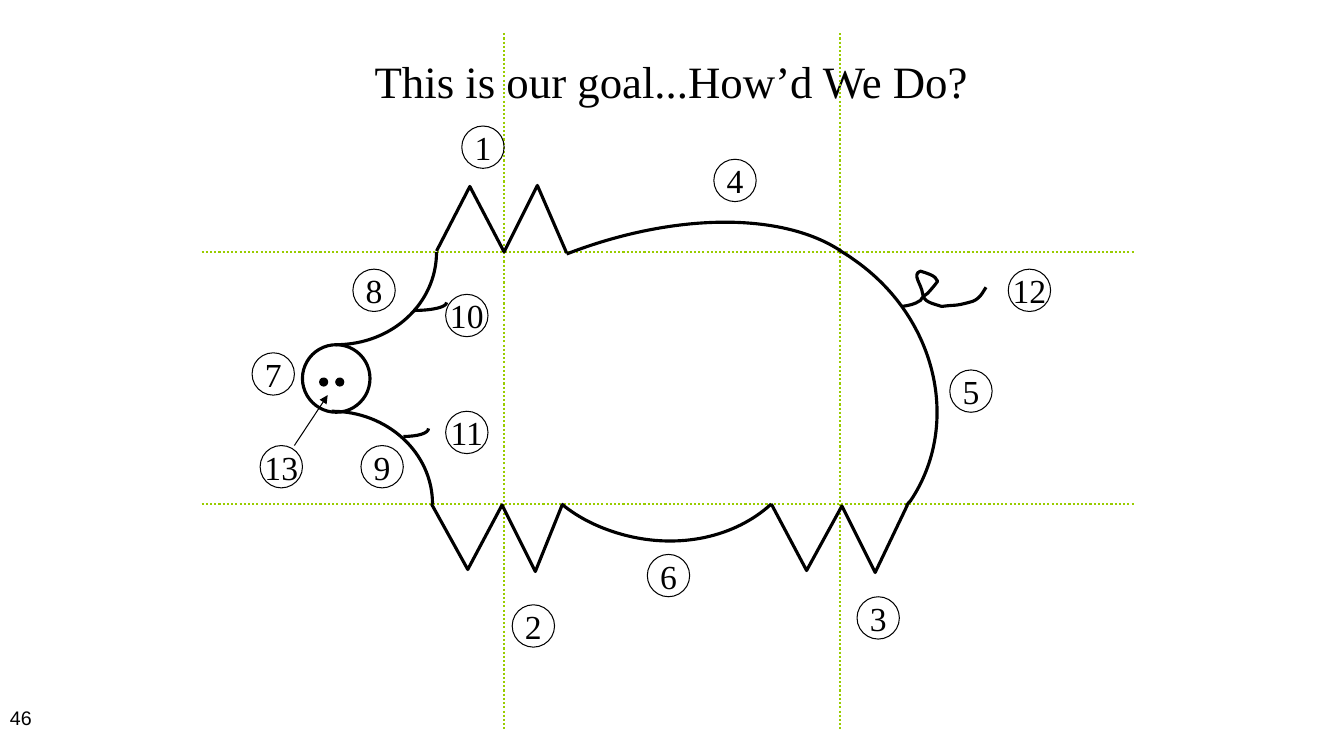
import math

from lxml import etree
from pptx import Presentation
from pptx.dml import color
from pptx.enum import dml, shapes, text
from pptx.oxml import ns
from pptx.util import Inches, Pt

BLACK, GREEN = "000000", "99CC00"
SERIF, SANS = "Times New Roman", "Arial"
BADGE_SIZE = 0.42
BADGES = [(4.58, 1.25), (5.08, 6), (8.5, 5.92), (7.08, 1.58), (9.42, 3.67),
          (6.42, 5.5), (2.5, 3.5), (3.5, 2.67), (3.58, 4.42), (4.42, 2.92),
          (4.42, 4.08), (10, 2.67)]
ZIGZAGS = [
    [(4.33, 2.49), (4.66, 1.85), (5, 2.5), (5.33, 1.84), (5.62, 2.51)],
    [(4.28, 5), (4.64, 5.65), (4.98, 5.01), (5.31, 5.67), (5.58, 5)],
    [(7.65, 5), (8, 5.66), (8.35, 5.02), (8.68, 5.68), (9, 5.01)],
]
BACK = [(5.62, 2.52), (6.68, 2.11), (7.75, 2.1), (8.34, 2.49)]
RUMP = [(8.32, 2.48), (8.37, 2.51), (8.42, 2.54), (8.46, 2.57),
        (9.29, 3.14), (9.54, 4.21), (9.03, 4.97),
        (9.01, 4.99), (9, 5), (8.99, 5.02)]
BELLY = [(7.65, 5), (7.29, 5.33), (6.74, 5.45), (6.2, 5.31),
         (5.97, 5.25), (5.75, 5.15), (5.57, 5)]
FOREHEAD = [(3.33, 3.42), (3.89, 3.42), (4.33, 3.01), (4.33, 2.5)]
CHIN = [(3.29, 4.08), (3.84, 4.08), (4.29, 4.49), (4.29, 5)]
EYE = [(4.1, 3.08), (4.28, 3.08), (4.43, 3.05), (4.43, 3)]
MOUTH = [(4, 4.33), (4.14, 4.33), (4.25, 4.3), (4.25, 4.25)]
TAIL = [(8.94, 3.04), (9.02, 3.03), (9.07, 3.02), (9.13, 2.98),
        (9.14, 2.96), (9.15, 2.95), (9.16, 2.94),
        (9.17, 2.93), (9.19, 2.92), (9.2, 2.91),
        (9.22, 2.89), (9.28, 2.82), (9.3, 2.79),
        (9.28, 2.73), (9.19, 2.71), (9.13, 2.69),
        (9.04, 2.72), (9.14, 2.82), (9.15, 2.91),
        (9.16, 3), (9.25, 3.01), (9.34, 3.04),
        (9.49, 3.02), (9.46, 3.04), (9.61, 3),
        (9.72, 2.98), (9.75, 2.89), (9.78, 2.85)]
CURVES = [
    (BACK, (5.66, 2, 2.69, 1.6), (6.09, 4.06), 336.9),
    (RUMP, (7.67, 2.89, 1.98, 1.73), (7.52, 3.95), 34.3),
    (BELLY, (6.04, 3.78, 1.25, 2.01), (6.52, 4.1), 104.5),
    (FOREHEAD, (3.33, 2.5, 1, 0.92), (3.33, 2.5), 0),
    (CHIN, (3.29, 4.08, 1, 0.92), (3.29, 5), 0),
    (EYE, (4.1, 3, 0.33, 0.08), (4.1, 3), 0),
    (MOUTH, (4, 4.25, 0.25, 0.08), (4, 4.25), 0),
    (TAIL, (8.94, 2.69, 0.84, 0.35), None, 0),
]


def set_color(target, value):
    """Apply a hex colour to a font, line or solid fill colour."""
    target.rgb = color.RGBColor.from_string(value)


def set_line(shape, value, width):
    """Set the colour and point width of an outline."""
    set_color(shape.line.color, value)
    shape.line.width = Pt(width)


def write(frame, content, size, font=SERIF, align=text.PP_ALIGN.CENTER):
    """Put one formatted paragraph in a text frame."""
    frame.text = content
    para = frame.paragraphs[0]
    para.alignment = align
    para.font.size = Pt(size)
    para.font.name = font
    set_color(para.font.color, BLACK)


def add_title(page, content):
    """Place and format the title."""
    title = page.shapes.title
    title.left, title.top = Inches(0.66), Inches(0.37)
    title.width, title.height = Inches(12), Inches(0.85)
    write(title.text_frame, content, 32)
    title.text_frame.vertical_anchor = text.MSO_ANCHOR.MIDDLE


def add_page_number(page, number):
    """Write the page number at the lower left."""
    box = page.shapes.add_textbox(Inches(0), Inches(6.95), Inches(3.11), Inches(0.4))
    box.text_frame.word_wrap = True
    write(box.text_frame, number, 14, SANS, text.PP_ALIGN.LEFT)


def add_line(parent, start, end, value, width):
    """Draw a straight line without a shadow."""
    line = parent.shapes.add_connector(
        shapes.MSO_CONNECTOR.STRAIGHT, *map(Inches, start + end))
    set_line(line, value, width)
    etree.SubElement(line._element.spPr, ns.qn("a:effectLst"))
    return line


def add_guide(page, start, end):
    """Draw a dotted grid line."""
    guide = add_line(page, start, end, GREEN, 1.5)
    guide.line.dash_style = dml.MSO_LINE.ROUND_DOT


def add_circle(parent, left, top, size, width, filled=False):
    """Draw a black circle, hollow or filled."""
    circle = parent.shapes.add_shape(
        shapes.MSO_SHAPE.OVAL, *map(Inches, (left, top, size, size)))
    circle.shadow.inherit = False
    set_line(circle, BLACK, width)
    if filled:
        circle.fill.solid()
        set_color(circle.fill.fore_color, BLACK)
    else:
        circle.fill.background()
    return circle


def add_badge(parent, number, left, top):
    """Draw a circled step number."""
    frame = add_circle(parent, left, top, BADGE_SIZE, 0.75).text_frame
    frame.word_wrap = False
    frame.vertical_anchor = text.MSO_ANCHOR.MIDDLE
    write(frame, str(number), 24)


def add_stroke(page, points):
    """Draw an open black outline through the points."""
    corners = [(Inches(x), Inches(y)) for x, y in points]
    builder = page.shapes.build_freeform(*corners[0])
    builder.add_line_segments(corners[1:], close=False)
    stroke = builder.convert_to_shape()
    stroke.shadow.inherit = False
    stroke.fill.background()
    set_line(stroke, BLACK, 2.25)
    return stroke


def unturn(point, frame, turn):
    """Give a point's place inside a frame before the frame is rotated."""
    left, top, width, height = frame
    angle = math.radians(-turn)
    x, y = point[0] - left - width / 2, point[1] - top - height / 2
    return (width / 2 + x * math.cos(angle) - y * math.sin(angle),
            height / 2 + x * math.sin(angle) + y * math.cos(angle))


def add_command(outline, name, points=()):
    """Append a drawing command with its points to an outline."""
    command = etree.SubElement(outline, ns.qn(f"a:{name}"))
    for x, y in points:
        etree.SubElement(command, ns.qn("a:pt"), x=str(Inches(x)), y=str(Inches(y)))


def add_outline(outlines, size, controls, **options):
    """Append a chain of cubic Bezier curves that share end points."""
    outline = etree.SubElement(outlines, ns.qn("a:path"), **size, **options)
    add_command(outline, "moveTo", controls[:1])
    for first in range(1, len(controls), 3):
        add_command(outline, "cubicBezTo", controls[first:first + 3])
    return outline


def add_curve(page, controls, frame, hub, turn):
    """Draw a curve, with an unstroked wedge to its hub if it has one."""
    left, top, width, height = frame
    stroke = add_stroke(page, [(left, top), (left + width, top + height)])
    stroke.rotation = turn
    outlines = next(stroke._element.iter(ns.qn("a:pathLst")))
    for outline in list(outlines):
        outlines.remove(outline)
    size = {"w": str(stroke.width), "h": str(stroke.height)}
    local = [unturn(point, frame, turn) for point in controls]
    add_outline(outlines, size, local, fill="none")
    if hub:
        wedge = add_outline(outlines, size, local, stroke="0")
        add_command(wedge, "lnTo", [unturn(hub, frame, turn)])
        add_command(wedge, "close")


def add_nostril_callout(page):
    """Group the last step number with its arrow to the nostrils."""
    group = page.shapes.add_group_shape()
    add_badge(group, len(BADGES) + 1, 2.58, 4.42)
    arrow = add_line(group, (2.92, 4.42), (3.25, 3.92), BLACK, 0.75)
    etree.SubElement(arrow.line._get_or_add_ln(), ns.qn("a:tailEnd"), type="triangle")


def main():
    """Build the pig drawing slide."""
    deck = Presentation()
    deck.slide_width, deck.slide_height = Inches(13.33), Inches(7.5)
    page = deck.slides.add_slide(deck.slide_layouts[5])
    add_title(page, "This is our goal...How’d We Do?")
    add_page_number(page, "46")
    for x in (5, 8.33):
        add_guide(page, (x, 0.33), (x, 7.25))
    for y in (2.5, 5):
        add_guide(page, (2, y), (11.25, y))
    for points in ZIGZAGS:
        add_stroke(page, points)
    add_circle(page, 3, 3.42, 0.67, 2.25)
    for curve in CURVES:
        add_curve(page, *curve)
    for left in (3.17, 3.33):
        add_circle(page, left, 3.75, 0.08, 0.75, filled=True)
    for number, (left, top) in enumerate(BADGES, 1):
        add_badge(page, number, left, top)
    add_nostril_callout(page)
    deck.save("out.pptx")


if __name__ == "__main__":
    main()
